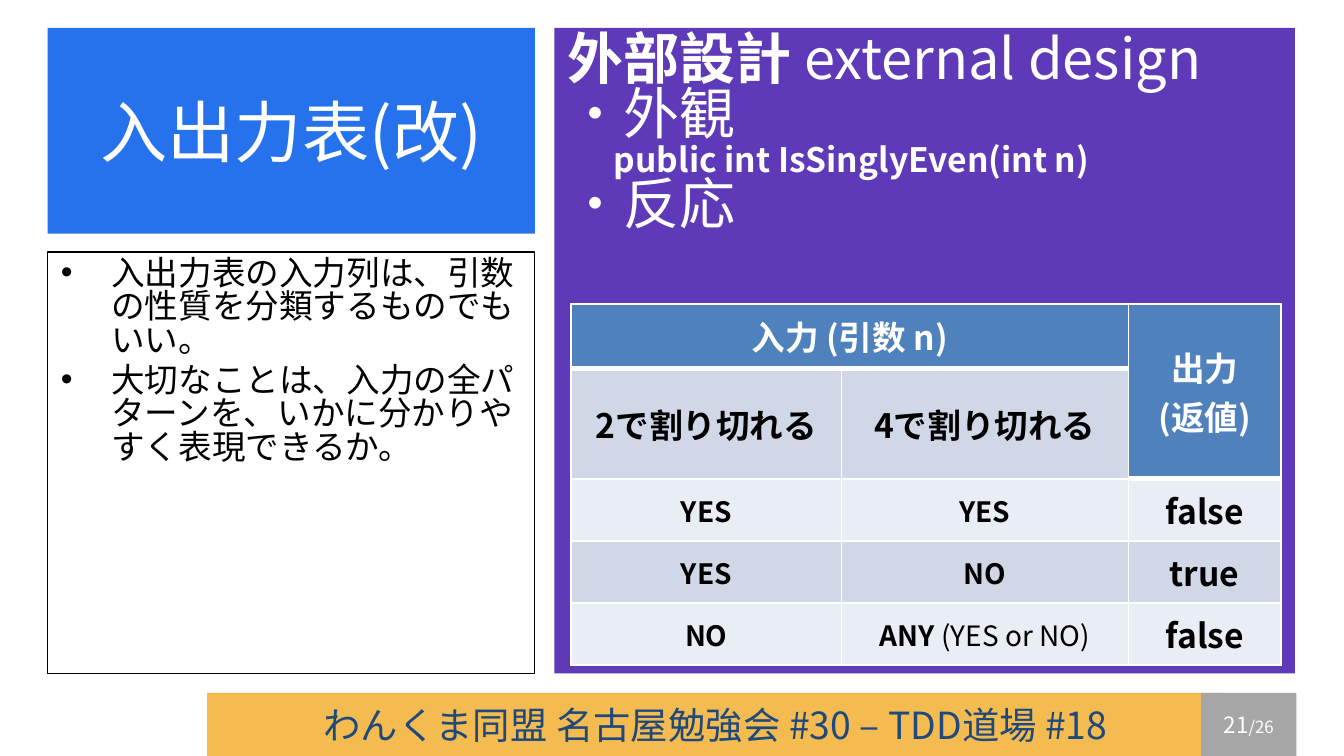
from lxml import etree
from pptx import Presentation
from pptx import util as u
from pptx.dml.color import RGBColor
from pptx.enum import shapes, text
from pptx.oxml.ns import qn

PX = 9525  # EMU per px, 96 px to the inch
FONT = "Noto Sans CJK JP"
TIGHT = 0.83  # line spacing of the two text panels
COLORS = {
    "white": "FFFFFF", "black": "000000", "blue": "2672EC", "purple": "5E3AB8",
    "orange": "F3BB50", "gray": "A6A6A6", "navy": "1F497D",
    "header": "4F81BD", "band": "D0D8E8", "light": "E9EDF4",
}


def px(*lengths):
    return [u.Emu(length * PX) for length in lengths]


def rgb(name):
    return RGBColor.from_string(COLORS[name])


def style(paragraph, size, color, bold=False, align=text.PP_ALIGN.LEFT):
    paragraph.alignment = align
    font = paragraph.font
    font.name, font.size, font.bold = FONT, u.Pt(size), bold
    font.color.rgb = rgb(color)
    properties = paragraph._p.pPr.find(qn("a:defRPr"))
    etree.SubElement(properties, qn("a:ea"), typeface=FONT)


def add_run(paragraph, content, **font):
    run = paragraph.add_run()
    run.text = content
    for name, value in font.items():
        setattr(run.font, name, value)


def next_paragraph(frame):
    first = frame.paragraphs[0]
    return first if not first.runs else frame.add_paragraph()


def set_frame(shape, anchor):
    frame = shape.text_frame
    frame.word_wrap = True
    frame.auto_size = text.MSO_AUTO_SIZE.NONE
    frame.vertical_anchor = anchor
    return frame


def add_panel(slide, box, fill=None, line=None, anchor=text.MSO_ANCHOR.MIDDLE):
    shape = slide.shapes.add_shape(shapes.MSO_SHAPE.RECTANGLE, *px(*box))
    shape.shadow.inherit = False
    if fill:
        shape.fill.solid()
        shape.fill.fore_color.rgb = rgb(fill)
    else:
        shape.fill.background()
    if line:
        shape.line.color.rgb = rgb(line)
        shape.line.width = u.Pt(0.75)
    else:
        shape.line.fill.background()
    return set_frame(shape, anchor)


def add_footer(slide):
    paragraph = add_panel(slide, (148, 495, 726, 45), "orange").paragraphs[0]
    add_run(paragraph, "わんくま同盟 名古屋勉強会 #30 – TDD道場 #18")
    style(paragraph, 20, "navy", align=text.PP_ALIGN.CENTER)

    paragraph = add_panel(slide, (858, 495, 68, 45), "gray").paragraphs[0]
    add_run(paragraph, "21")
    add_run(paragraph, "/26", size=u.Pt(9))
    style(paragraph, 12, "white", align=text.PP_ALIGN.CENTER)


def add_title(slide):
    title = slide.shapes.title
    title.left, title.top, title.width, title.height = px(34, 20, 348, 147)
    title.fill.solid()
    title.fill.fore_color.rgb = rgb("blue")
    paragraph = set_frame(title, text.MSO_ANCHOR.MIDDLE).paragraphs[0]
    add_run(paragraph, "入出力表(改)")
    style(paragraph, 36, "white", align=text.PP_ALIGN.CENTER)


def add_notes_panel(slide, items):
    frame = add_panel(slide, (34, 180, 348, 301), line="black", anchor=text.MSO_ANCHOR.TOP)
    for index, item in enumerate(items):
        paragraph = next_paragraph(frame)
        add_run(paragraph, item)
        properties = paragraph._p.get_or_add_pPr()
        properties.set("marL", str(36 * PX))
        properties.set("indent", str(-36 * PX))
        etree.SubElement(properties, qn("a:buFont"), typeface="Arial")
        etree.SubElement(properties, qn("a:buChar"), char="•")
        paragraph.line_spacing = TIGHT
        paragraph.space_before = u.Pt(3.6 if index else 0)
        style(paragraph, 18, "black")


def add_design_panel(slide):
    frame = add_panel(slide, (396, 20, 529, 461), "purple", anchor=text.MSO_ANCHOR.TOP)
    lines = [  # runs as (text, bold), size, left margin in px
        ([("外部設計 ", True), ("external design", False)], 30, 0),
        ([("・外観", False)], 30, 0),
        ([("public int IsSinglyEven(int n)", True)], 18, 33),
        ([("・反応", False)], 30, 0),
    ]
    for runs, size, margin in lines:
        paragraph = next_paragraph(frame)
        for content, bold in runs:
            add_run(paragraph, content, bold=bold)
        paragraph._p.get_or_add_pPr().set("marL", str(margin * PX))
        paragraph.line_spacing = TIGHT
        style(paragraph, size, "white")


def set_borders(cell, **widths):
    properties = cell._tc.get_or_add_tcPr()
    for side in "LRTB":
        line = etree.SubElement(properties, qn(f"a:ln{side}"), w=str(u.Pt(widths.get(side, 1))))
        fill = etree.SubElement(line, qn("a:solidFill"))
        etree.SubElement(fill, qn("a:srgbClr"), val=COLORS["white"])


def add_truth_table(slide):
    widths, heights = (193, 205, 109), (46, 52, 37, 37, 37)
    rows = [
        ["入力 (引数 n)", "", "出力\n(返値)"],
        ["2で割り切れる", "4で割り切れる", ""],
        ["YES", "YES", "false"],
        ["YES", "NO", "true"],
        ["NO", "ANY |(YES or NO)", "false"],  # the part after | is not bold
    ]
    header = {(0, 0), (0, 1), (0, 2), (1, 2)}
    box = px(408, 217, sum(widths), sum(heights))
    table = slide.shapes.add_table(len(rows), len(widths), *box).table
    table.first_row = table.horz_banding = False
    for column, width in zip(table.columns, px(*widths)):
        column.width = width
    for row, height in zip(table.rows, px(*heights)):
        row.height = height

    for r, row in enumerate(rows):
        for c, content in enumerate(row):
            cell = table.cell(r, c)
            is_header = (r, c) in header
            set_borders(cell, T=3 if (r - 1, c) in header else 1, B=3 if is_header else 1)
            cell.fill.solid()
            fill = "header" if is_header else "band" if r % 2 else "light"
            cell.fill.fore_color.rgb = rgb(fill)
            cell.vertical_anchor = text.MSO_ANCHOR.MIDDLE
            if not content:
                continue
            for line in content.split("\n"):
                paragraph = next_paragraph(cell.text_frame)
                strong, _, plain = line.partition("|")
                add_run(paragraph, strong)
                if plain:
                    add_run(paragraph, plain, bold=False)
                size = 15 if r > 1 and c < 2 else 18
                color = "white" if is_header else "black"
                style(paragraph, size, color, True, text.PP_ALIGN.CENTER)
    table.cell(0, 0).merge(table.cell(0, 1))
    table.cell(0, 2).merge(table.cell(1, 2))


def main():
    presentation = Presentation()
    presentation.slide_width, presentation.slide_height = px(960, 540)
    slide = presentation.slides.add_slide(presentation.slide_layouts[5])
    add_footer(slide)
    add_title(slide)
    add_notes_panel(slide, [
        "入出力表の入力列は、引数の性質を分類するものでもいい。",
        "大切なことは、入力の全パターンを、いかに分かりやすく表現できるか。",
    ])
    add_design_panel(slide)
    add_truth_table(slide)
    presentation.save("out.pptx")


if __name__ == "__main__":
    main()
